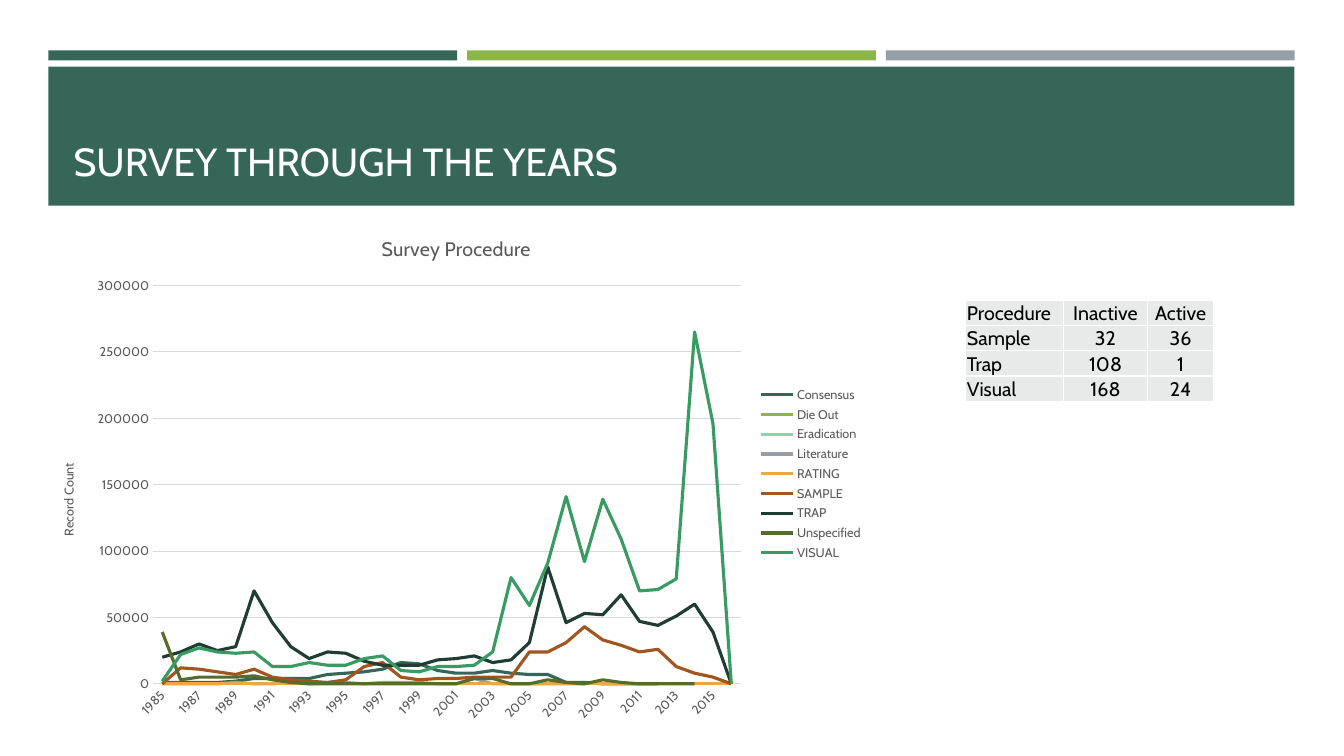
from lxml import etree
from pptx import Presentation
from pptx.chart.data import CategoryChartData
from pptx.dml.color import RGBColor
from pptx.enum.chart import XL_CHART_TYPE as ChartType
from pptx.enum.chart import XL_LEGEND_POSITION as LegendPos
from pptx.enum.chart import XL_TICK_MARK as TickMark
from pptx.enum.shapes import MSO_SHAPE as Shape
from pptx.enum.text import MSO_ANCHOR as Anchor
from pptx.enum.text import PP_ALIGN as Align
from pptx.oxml.ns import qn
from pptx.util import Inches, Pt

FONT = "Cabin"
GREEN, LIME, GREY = "366658", "8CB64A", "969FA7"
INK, RULE, CELL, WHITE = "595959", "D9D9D9", "E8EAEA", "FFFFFF"

YEARS = range(1985, 2017)
NA = None
# Survey procedure: line colour, then thousands of records per year from 1985
SURVEYS = {
    "Consensus": (GREEN, [1, 1, 1, 1, 2, 4, 4, 4, 4, 7, 8, 9, 11, 16, 15, 10, 8, 8, 10, 8,
                          7, 7, 1, 1, 0, 0, 0, 0] + [NA] * 4),
    "Die Out": (LIME, [NA] * 4 + [0, NA] + [0] * 9 + [NA, 0] + [NA] * 10 + [0] + [NA] * 4),
    "Eradication": ("88D5A9", [0] * 31 + [NA]),
    "Literature": (GREY, [0, 0, 0, 0, 1, 0, 0, 1, 0, 1, 1, 0, 1, 1, 1, 0, 0, 4]
                   + [0] * 6 + [NA] * 8),
    "RATING": ("E8A844", [0] * 32),
    "SAMPLE": ("A1561F", [0, 12, 11, 9, 7, 11, 5, 3, 2, 1, 3, 13, 16, 5, 3, 4, 4, 5, 5, 5,
                          24, 24, 31, 43, 33, 29, 24, 26, 13, 8, 5, 0]),
    "TRAP": ("203D35", [20, 24, 30, 25, 28, 70, 46, 28, 19, 24, 23, 17, 14, 14, 14, 18, 19,
                        21, 16, 18, 31, 88, 46, 53, 52, 67, 47, 44, 51, 60, 39, 0]),
    "Unspecified": ("546D2C", [39, 3, 5, 5, 5, 6, 3, 1] + [0] * 9
                    + [4, 4, 0, 0, 3, 1, 0, 3, 1, 0, 0, 0, 0, NA, NA]),
    "VISUAL": ("379B62", [2, 22, 27, 24, 23, 24, 13, 13, 16, 14, 14, 19, 21, 10, 9, 13, 13,
                          14, 24, 80, 59, 91, 141, 92, 139, 109, 70, 71, 79, 265, 196, 0]),
}
PROCEDURES = [
    ("Procedure", "Inactive", "Active"),
    ("Sample", "32", "36"),
    ("Trap", "108", "1"),
    ("Visual", "168", "24"),
]


def rgb(color):
    return RGBColor.from_string(color)


def style(font, size, color):
    font.name, font.size, font.bold = FONT, Pt(size), False
    font.color.rgb = rgb(color)


def add_rect(slide, left, top, width, height, color):
    sp = slide.shapes.add_shape(Shape.RECTANGLE, Inches(left), Inches(top),
                                Inches(width), Inches(height))
    sp.shadow.inherit = False
    sp.fill.solid()
    sp.fill.fore_color.rgb = rgb(color)
    sp.line.fill.background()


def add_header(slide, left, top, width, text):
    # Three strips above the title band
    gap = 0.1
    strip = (width - 2 * gap) / 3
    for i, color in enumerate((GREEN, LIME, GREY)):
        add_rect(slide, left + i * (strip + gap), top, strip, 0.1, color)
    add_rect(slide, left, top + 0.16, width, 1.38, GREEN)

    # Title, drawn above the band
    title = slide.shapes.title
    title.left, title.top = Inches(left + 0.15), Inches(top + 0.3)
    title.width, title.height = Inches(width - 0.3), Inches(1.08)
    slide.shapes._spTree.append(title._element)
    tf = title.text_frame
    tf.text = text
    tf.word_wrap = True
    tf.vertical_anchor = Anchor.BOTTOM
    p = tf.paragraphs[0]
    p.alignment = Align.LEFT
    style(p.runs[0].font, 28, WHITE)


def add_chart_title(owner, text, size):
    tf = owner.text_frame
    tf.text = text
    style(tf.paragraphs[0].runs[0].font, size, INK)


def add_survey_chart(slide, left, top, width, height):
    data = CategoryChartData()
    data.categories = [str(year) for year in YEARS]
    for name, (_, thousands) in SURVEYS.items():
        data.add_series(name, [NA if v is NA else v * 1000 for v in thousands])
    chart = slide.shapes.add_chart(ChartType.LINE, Inches(left), Inches(top),
                                   Inches(width), Inches(height), data).chart
    style(chart.font, 10, INK)
    chart.has_title = True
    add_chart_title(chart.chart_title, "Survey Procedure", 14)
    chart.chart_title.include_in_layout = False

    # Lines
    plot = chart.plots[0]
    plot.vary_by_categories = False
    for series, (color, _) in zip(plot.series, SURVEYS.values()):
        series.smooth = False
        series.format.line.width = Pt(2.25)
        series.format.line.color.rgb = rgb(color)

    # Axes
    years, counts = chart.category_axis, chart.value_axis
    for axis in (years, counts):
        axis.major_tick_mark = axis.minor_tick_mark = TickMark.NONE
        style(axis.tick_labels.font, 9, INK)
    years._element.find(qn("c:txPr")).find(qn("a:bodyPr")).set("rot", "-2700000")
    counts.minimum_scale, counts.maximum_scale, counts.major_unit = 0, 300000, 50000
    counts.format.line.fill.background()
    for line in (years.format.line, counts.major_gridlines.format.line):
        line.color.rgb = rgb(RULE)
        line.width = Pt(0.75)
    counts.has_title = True
    add_chart_title(counts.axis_title, "Record Count", 9)

    # Legend
    chart.has_legend = True
    chart.legend.position = LegendPos.RIGHT
    chart.legend.include_in_layout = False
    style(chart.legend.font, 9, INK)


def add_borders(cell):
    tc_pr = cell._tc.get_or_add_tcPr()
    for i, side in enumerate(("a:lnL", "a:lnR", "a:lnT", "a:lnB")):
        ln = etree.Element(qn(side), w=str(Pt(1)))
        fill = etree.SubElement(ln, qn("a:solidFill"))
        etree.SubElement(fill, qn("a:srgbClr"), val=WHITE)
        tc_pr.insert(i, ln)


def add_procedure_table(slide, left, top, widths, row_height):
    table = slide.shapes.add_table(len(PROCEDURES), len(widths), Inches(left), Inches(top),
                                   Inches(sum(widths)),
                                   Inches(row_height * len(PROCEDURES))).table
    for column, width in zip(table.columns, widths):
        column.width = Inches(width)
    for r, row in enumerate(PROCEDURES):
        for c, text in enumerate(row):
            cell = table.cell(r, c)
            cell.fill.solid()
            cell.fill.fore_color.rgb = rgb(CELL)
            cell.vertical_anchor = Anchor.BOTTOM
            cell.margin_left = cell.margin_right = cell.margin_top = Inches(0.01)
            cell.margin_bottom = 0
            cell.text = text
            p = cell.text_frame.paragraphs[0]
            p.alignment = Align.CENTER if c else Align.LEFT
            style(p.runs[0].font, 14, "000000")
            add_borders(cell)


def main():
    prs = Presentation()
    prs.slide_width, prs.slide_height = Inches(13.33), Inches(7.5)
    slide = prs.slides.add_slide(prs.slide_layouts[5])
    add_header(slide, 0.48, 0.5, 12.36, "SURVEY THROUGH THE YEARS")
    add_survey_chart(slide, 0.39, 2.14, 8.27, 5.12)
    add_procedure_table(slide, 9.58, 2.98, (0.97, 0.83, 0.66), 0.25)
    prs.save("out.pptx")


if __name__ == "__main__":
    main()
